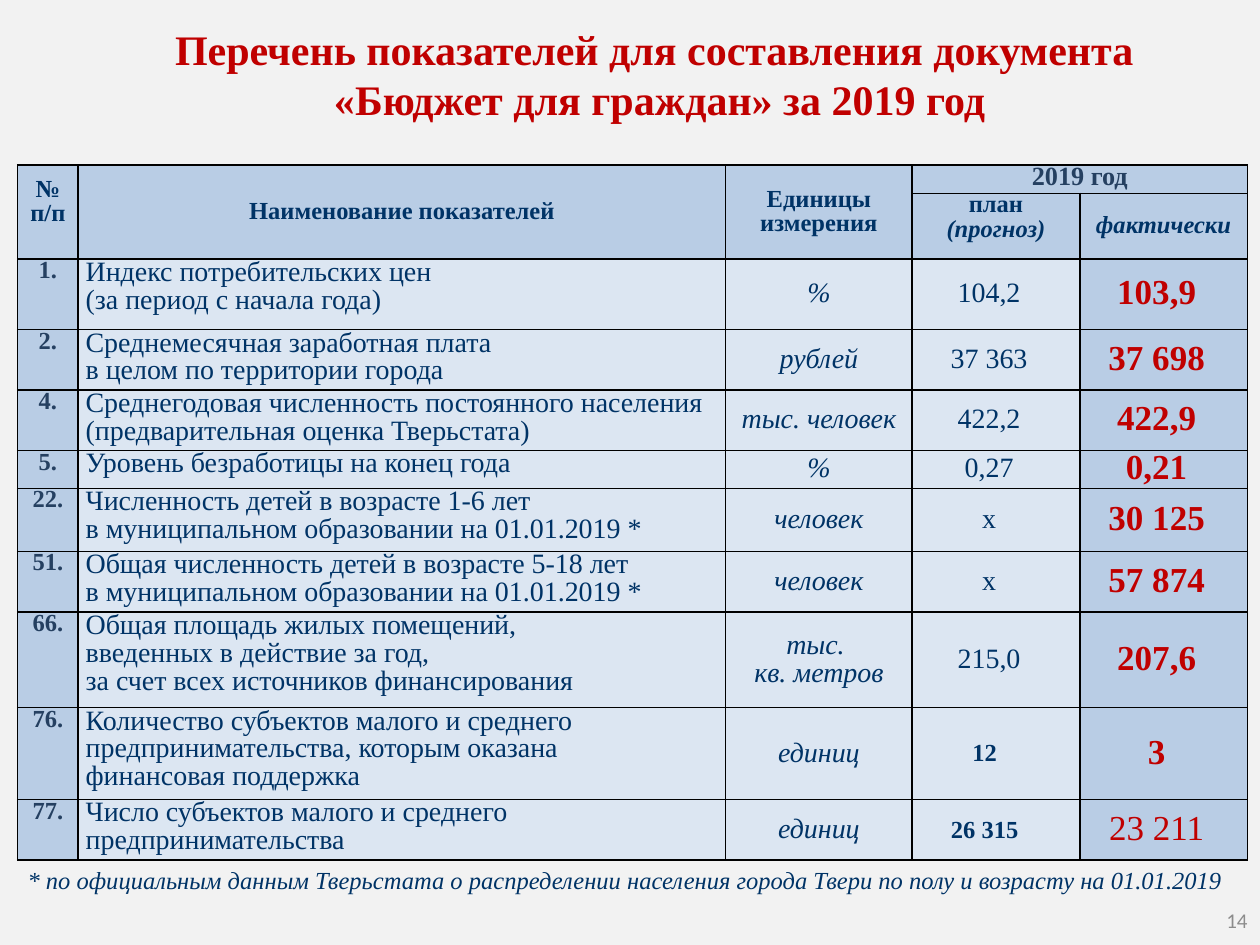
from lxml import etree
from pptx import Presentation
from pptx import util as u
from pptx.dml.color import RGBColor
from pptx.enum import text
from pptx.oxml.ns import qn

COLORS = {
    "page": "F2F2F2", "header": "B9CDE5", "body": "DCE6F2", "navy": "003366",
    "slate": "254061", "red": "C00000", "gray": "8C8C8C", "border": "000000",
}
SERIF = "Times New Roman"
CENTER, LEFT, RIGHT = text.PP_ALIGN.CENTER, text.PP_ALIGN.LEFT, text.PP_ALIGN.RIGHT
TOP, MIDDLE = text.MSO_ANCHOR.TOP, text.MSO_ANCHOR.MIDDLE

TITLE = "Перечень показателей для составления документа \v«Бюджет для граждан» за 2019 год"
FOOTNOTE = ("* по официальным данным Тверьстата о распределении населения "
            "города Твери по полу и возрасту на 01.01.2019")
PAGE_NUMBER = "14"

HEADINGS = [
    (0, 0, "№\nп/п"),
    (0, 1, "Наименование показателей"),
    (0, 2, "Единицы измерения"),
    (0, 3, "2019 год"),
    (1, 3, "план "),
    (1, 4, "фактически"),
]
MERGES = [((0, 0), (1, 0)), ((0, 1), (1, 1)), ((0, 2), (1, 2)), ((0, 3), (0, 4))]

INDICATORS = [
    ("1.", "Индекс потребительских цен\n(за период с начала года)", "%", "104,2", "103,9"),
    ("2.", "Среднемесячная заработная плата\nв целом по территории города",
     "рублей", "37 363", "37 698"),
    ("4.", "Среднегодовая численность постоянного населения\n(предварительная оценка Тверьстата)",
     "тыс. человек", "422,2", "422,9"),
    ("5.", "Уровень безработицы на конец года", "%", "0,27", "0,21"),
    ("22.", "Численность детей в возрасте 1-6 лет \vв муниципальном образовании на 01.01.2019 *",
     "человек", "х", "30 125"),
    ("51.", "Общая численность детей в возрасте 5-18 лет\vв муниципальном образовании на 01.01.2019 *",
     "человек", "х", "57 874"),
    ("66.", "Общая площадь жилых помещений, \vвведенных в действие за год, \v"
            "за счет всех источников финансирования", "тыс. \nкв. метров", "215,0", "207,6"),
    ("76.", "Количество субъектов малого и среднего предпринимательства, которым оказана \v"
            "финансовая поддержка", "единиц", "12", "3"),
    ("77.", "Число субъектов малого и среднего предпринимательства",
     "единиц", "26 315", "23 211"),
]
BOLD_PLANS = {"76.", "77."}
LIGHT_ACTUALS = {"77."}

COLUMNS = [0.48, 5.14, 1.48, 1.33, 1.33]
ROWS = [0.21, 0.49, 0.56, 0.44, 0.44, 0.3, 0.5, 0.47, 0.76, 0.73, 0.44]


def color(name):
    return RGBColor.from_string(COLORS[name])


def style(frame, size, ink, align=CENTER, bold=False, italic=False, font=SERIF, spacing=None):
    for paragraph in frame.paragraphs:
        paragraph.alignment = align
        if spacing:
            paragraph.line_spacing = spacing
        for run in paragraph.runs:
            run.font.name = font
            run.font.size = u.Pt(size)
            run.font.bold, run.font.italic = bold, italic
            run.font.color.rgb = color(ink)


def add_text(slide, box, content, anchor, **look):
    frame = slide.shapes.add_textbox(*map(u.Inches, box)).text_frame
    frame.word_wrap = True
    frame.vertical_anchor = anchor
    frame.text = content
    style(frame, **look)


def outline(cell):
    properties = cell._tc.get_or_add_tcPr()
    for position, side in enumerate(("lnL", "lnR", "lnT", "lnB")):
        line = etree.Element(qn("a:" + side), w=str(u.Pt(1)))
        fill = etree.SubElement(line, qn("a:solidFill"))
        etree.SubElement(fill, qn("a:srgbClr"), val=COLORS["border"])
        properties.insert(position, line)


def fill_cell(cell, content, anchor=MIDDLE, right=0.06, top=0, spacing=0.9, **look):
    cell.vertical_anchor = anchor
    cell.margin_left, cell.margin_right = u.Inches(0.06), u.Inches(right)
    cell.margin_top, cell.margin_bottom = u.Inches(top), 0
    cell.text_frame.text = content
    style(cell.text_frame, spacing=spacing, **look)


def add_indicators(slide):
    table = slide.shapes.add_table(
        len(ROWS), len(COLUMNS), u.Inches(0.14), u.Inches(1.31),
        u.Inches(sum(COLUMNS)), u.Inches(sum(ROWS))).table
    table.first_row = table.horz_banding = False
    for column, width in zip(table.columns, COLUMNS):
        column.width = u.Inches(width)
    for row, height in zip(table.rows, ROWS):
        row.height = u.Inches(height)

    for r in range(len(ROWS)):
        for c in range(len(COLUMNS)):
            cell = table.cell(r, c)
            cell.fill.solid()
            cell.fill.fore_color.rgb = color("body" if r > 1 and c in (1, 2, 3) else "header")
            outline(cell)
            fill_cell(cell, "", size=7, ink="navy")

    for start, end in MERGES:
        table.cell(*start).merge(table.cell(*end))
    for r, c, heading in HEADINGS:
        year = (r, c) == (0, 3)
        fill_cell(table.cell(r, c), heading, size=15 if year else 14,
                  ink="slate" if year else "navy", bold=True, italic=(r, c) == (1, 4),
                  anchor=TOP if c in (0, 3) else MIDDLE, top=0.1 if c == 0 else 0)
    plan = table.cell(1, 3).text_frame
    plan.paragraphs[0].add_run().text = "(прогноз)"
    style(plan, 14, "navy", bold=True)
    plan.paragraphs[0].runs[1].font.italic = True

    for r, (number, name, unit, planned, actual) in enumerate(INDICATORS, start=2):
        strong = number in BOLD_PLANS
        cells = [table.cell(r, c) for c in range(len(COLUMNS))]
        fill_cell(cells[0], number, TOP, size=14, ink="slate", bold=True)
        fill_cell(cells[1], name, TOP, size=16, ink="navy", align=LEFT)
        fill_cell(cells[2], unit, size=16, ink="navy", italic=True)
        fill_cell(cells[3], planned, right=0.24 if strong else 0.17,
                  spacing=None if strong else 0.9,
                  size=14 if strong else 16, ink="navy", bold=strong)
        fill_cell(cells[4], actual, right=0.17, size=20, ink="red",
                  bold=number not in LIGHT_ACTUALS)


def main():
    deck = Presentation()
    deck.slide_width, deck.slide_height = u.Inches(10), u.Inches(7.5)
    slide = deck.slides.add_slide(deck.slide_layouts[6])
    slide.background.fill.solid()
    slide.background.fill.fore_color.rgb = color("page")
    add_text(slide, (7.67, 7.1, 2.33, 0.4), PAGE_NUMBER, MIDDLE,
             size=12, ink="gray", align=RIGHT, font="Calibri")
    add_indicators(slide)
    add_text(slide, (0.57, 0.13, 9.33, 0.91), TITLE, MIDDLE, size=24, ink="red", bold=True)
    add_text(slide, (0.12, 6.82, 9.88, 0.34), FOOTNOTE, TOP,
             size=14, ink="navy", align=LEFT, italic=True)
    deck.save("out.pptx")


if __name__ == "__main__":
    main()
